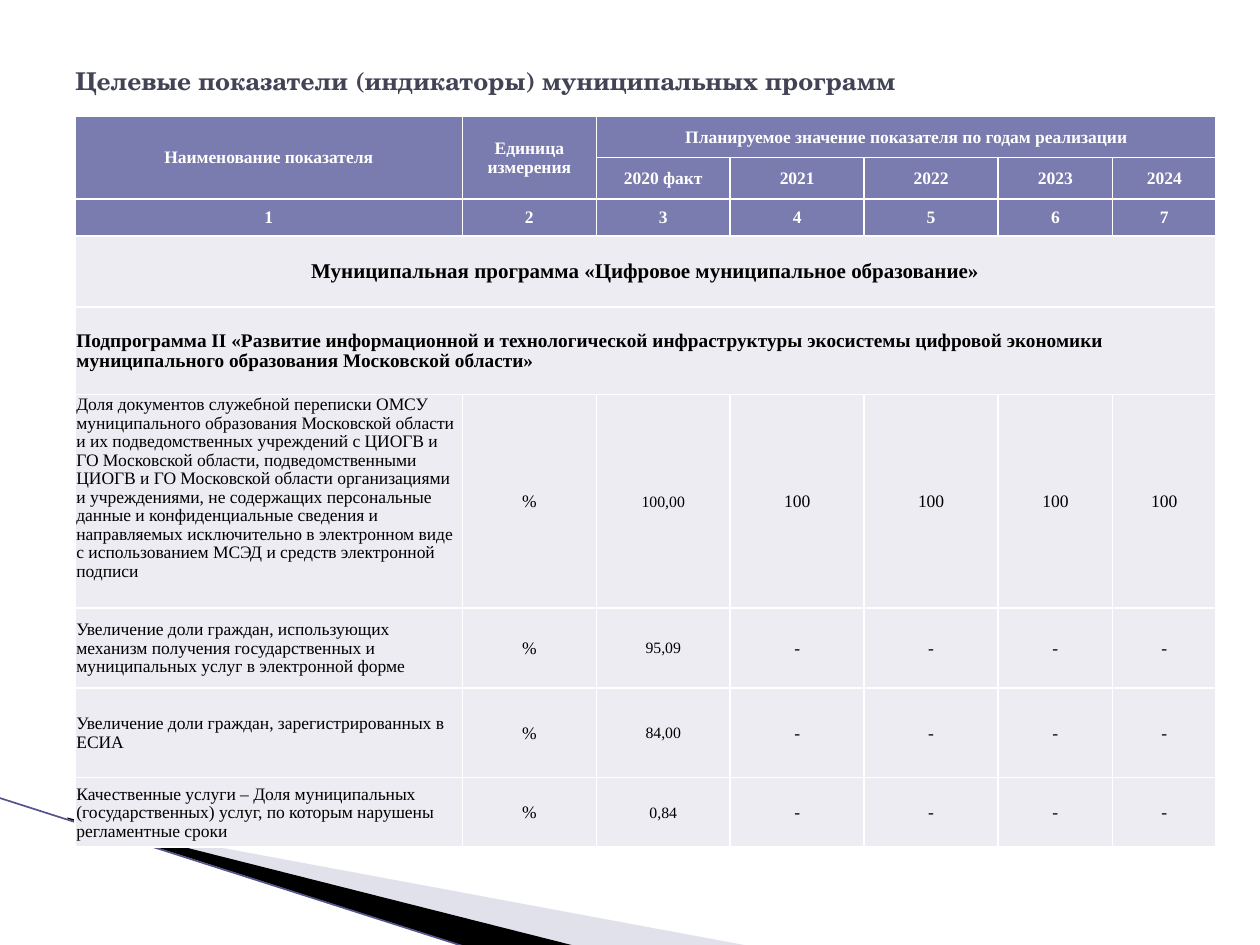
from lxml import etree
from pptx import Presentation
from pptx import util as u
from pptx.dml.color import RGBColor
from pptx.enum import shapes, text
from pptx.oxml import ns

COLORS = {
    "title": "424456", "header": "7A7BAE", "body": "ECECF2",
    "white": "FFFFFF", "black": "000000", "wedge": "B6B6D1", "line": "53548A",
}
SERIF = "Times New Roman"
COLUMNS = [7.81, 2.7, 2.7, 2.7, 2.7, 2.31, 2.08]
ROWS = [0.83, 0.81, 0.74, 1.43, 1.77, 4.3, 1.61, 1.81, 1.4]
YEARS = ["2020 факт", "2021", "2022", "2023", "2024"]
PROGRAM = "Муниципальная программа «Цифровое муниципальное образование»"
SUBPROGRAM = (
    "Подпрограмма II «Развитие информационной и технологической инфраструктуры "
    "экосистемы цифровой экономики муниципального образования Московской области»"
)
INDICATORS = [
    ("Доля документов служебной переписки ОМСУ муниципального образования "
     "Московской области и их подведомственных учреждений с ЦИОГВ и ГО "
     "Московской области, подведомственными ЦИОГВ и ГО Московской области "
     "организациями и учреждениями, не содержащих персональные данные и "
     "конфиденциальные сведения и направляемых исключительно в электронном "
     "виде с использованием МСЭД и средств электронной подписи", "100,00", "100"),
    ("Увеличение доли граждан, использующих механизм получения государственных "
     "и муниципальных услуг в электронной форме", "95,09", "-"),
    ("Увеличение доли граждан, зарегистрированных в ЕСИА", "84,00", "-"),
    ("Качественные услуги – Доля муниципальных (государственных) услуг, "
     "по которым нарушены регламентные сроки", "0,84", "-"),
]


def rgb(name):
    return RGBColor.from_string(COLORS[name])


def add_run(p, words, size, color, bold, font=SERIF):
    r = p.add_run()
    r.text = words
    r.font.name = font
    r.font.size = u.Pt(size)
    r.font.bold = bold
    r.font.color.rgb = rgb(color)


def add_wedge(s, points, color, alpha=None):
    start, *rest = [(u.Cm(x), u.Cm(y)) for x, y in points]
    builder = s.shapes.build_freeform(*start)
    builder.add_line_segments(rest, close=True)
    sp = builder.convert_to_shape()
    sp.shadow.inherit = False
    sp.fill.solid()
    sp.fill.fore_color.rgb = rgb(color)
    sp.line.fill.background()
    if alpha:
        clr = sp.fill._xPr.find(".//" + ns.qn("a:srgbClr"))
        etree.SubElement(clr, ns.qn("a:alpha")).set("val", str(alpha * 1000))


def add_line(s, x1, y1, x2, y2):
    line = s.shapes.add_connector(
        shapes.MSO_CONNECTOR.STRAIGHT, u.Cm(x1), u.Cm(y1), u.Cm(x2), u.Cm(y2))
    line.line.color.rgb = rgb("line")
    line.line.width = u.Pt(0.95)
    etree.SubElement(line._element.spPr, ns.qn("a:effectLst"))


def add_title(s, words):
    sp = s.shapes.add_textbox(u.Cm(1.27), u.Cm(0.76), u.Cm(22.86), u.Cm(1.75))
    tf = sp.text_frame
    tf.word_wrap = True
    tf.vertical_anchor = text.MSO_ANCHOR.MIDDLE
    add_run(tf.paragraphs[0], words, 14, "title", True, "TeX Gyre Schola")


def style_cell(cell, fill):
    props = cell._tc.get_or_add_tcPr()
    for side in ("lnL", "lnR", "lnT", "lnB"):
        ln = etree.SubElement(props, ns.qn("a:" + side), w=str(u.Pt(1)))
        solid = etree.SubElement(ln, ns.qn("a:solidFill"))
        etree.SubElement(solid, ns.qn("a:srgbClr"), val=COLORS["white"])
    cell.fill.solid()
    cell.fill.fore_color.rgb = rgb(fill)
    cell.margin_left = cell.margin_right = cell.margin_top = u.Cm(0.03)
    cell.margin_bottom = 0
    cell.vertical_anchor = text.MSO_ANCHOR.MIDDLE


def write_cell(cell, words, size=10, color="black", bold=False, center=True):
    p = cell.text_frame.paragraphs[0]
    p.alignment = text.PP_ALIGN.CENTER if center else text.PP_ALIGN.LEFT
    p.line_spacing = 0.96
    add_run(p, words, size, color, bold)


def write_header(table):
    def head(row, col, words):
        write_cell(table.cell(row, col), words, color="white", bold=True)

    for col in (0, 1):
        table.cell(0, col).merge(table.cell(1, col))
    table.cell(0, 2).merge(table.cell(0, 6))
    head(0, 0, "Наименование показателя")
    head(0, 1, "Единица измерения")
    head(0, 2, "Планируемое значение показателя по годам реализации")
    for col, year in enumerate(YEARS, 2):
        head(1, col, year)
    for col in range(len(COLUMNS)):
        head(2, col, str(col + 1))


def write_body(table):
    for row in (3, 4):
        table.cell(row, 0).merge(table.cell(row, 6))
    write_cell(table.cell(3, 0), PROGRAM, 12, bold=True)
    write_cell(table.cell(4, 0), SUBPROGRAM, 11, bold=True, center=False)
    for row, (name, fact, plan) in enumerate(INDICATORS, 5):
        write_cell(table.cell(row, 0), name, center=False)
        write_cell(table.cell(row, 1), "%")
        write_cell(table.cell(row, 2), fact, 9)
        for col in range(3, len(COLUMNS)):
            write_cell(table.cell(row, col), plan)
    table.cell(5, 0).vertical_anchor = text.MSO_ANCHOR.TOP


def add_indicator_table(s):
    table = s.shapes.add_table(
        len(ROWS), len(COLUMNS), u.Cm(1.51), u.Cm(2.34),
        u.Cm(sum(COLUMNS)), u.Cm(sum(ROWS))).table
    for column, width in zip(table.columns, COLUMNS):
        column.width = u.Cm(width)
    for index, height in enumerate(ROWS):
        table.rows[index].height = u.Cm(height)
        for cell in table.rows[index].cells:
            style_cell(cell, "header" if index < 3 else "body")
    write_header(table)
    write_body(table)


def main():
    prs = Presentation()
    prs.slide_width, prs.slide_height = u.Cm(25.4), u.Cm(19.05)
    s = prs.slides.add_slide(prs.slide_layouts[6])
    add_wedge(s, [(1.4, 16.52), (15.11, 19.07), (11.58, 19.07)], "wedge", 40)
    add_wedge(s, [(1.35, 16.48), (11.6, 19.07), (9.45, 19.1), (1.37, 16.51)], "black")
    add_line(s, -0.03, 16.08, 9.42, 19.1)
    add_title(s, "Целевые показатели (индикаторы) муниципальных программ")
    add_indicator_table(s)
    prs.save("out.pptx")


if __name__ == "__main__":
    main()
